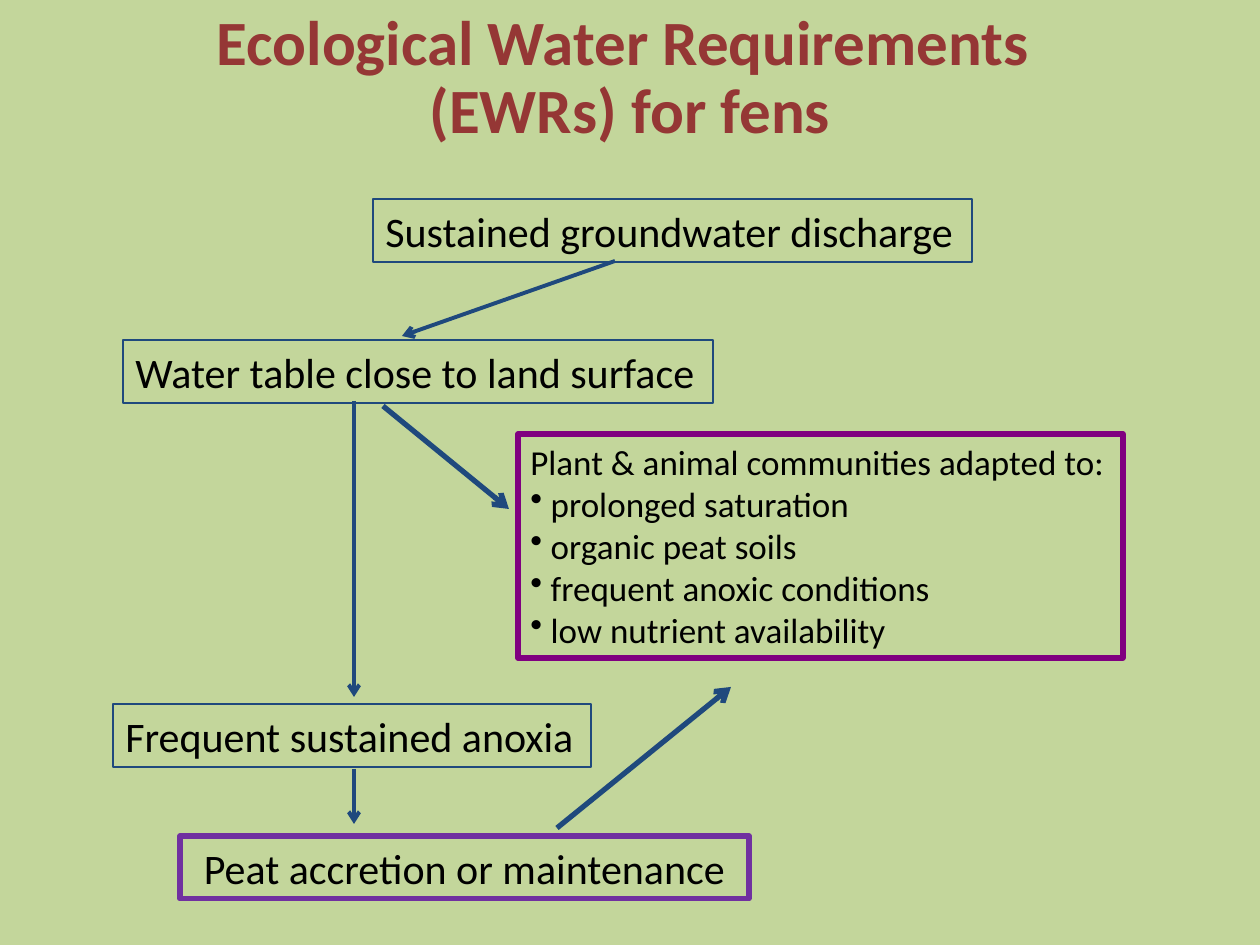
"""Builds a flow chart slide on the ecological water requirements of fens."""
from lxml import etree
from pptx import Presentation
from pptx.dml.color import RGBColor
from pptx.enum.shapes import MSO_CONNECTOR, MSO_SHAPE
from pptx.enum.text import MSO_ANCHOR, MSO_AUTO_SIZE, PP_ALIGN
from pptx.oxml.ns import qn
from pptx.util import Emu, Pt

RECTANGLE = MSO_SHAPE.RECTANGLE
STRAIGHT = MSO_CONNECTOR.STRAIGHT
LEFT, CENTER = PP_ALIGN.LEFT, PP_ALIGN.CENTER
TOP, MIDDLE = MSO_ANCHOR.TOP, MSO_ANCHOR.MIDDLE
FIT_SHAPE = MSO_AUTO_SIZE.SHAPE_TO_FIT_TEXT

EMU_PER_PX = 914400 // 126
FONT = "Calibri"
COLORS = {
    "background": "C3D69B",
    "title": "953735",
    "text": "000000",
    "flow": "1F497D",
    "peat": "7030A0",
    "communities": "800080",
}
ADAPTATIONS = [
    "prolonged saturation",
    "organic peat soils",
    "frequent anoxic conditions",
    "low nutrient availability",
]
FLOW_BOXES = [
    ("Water table close to land surface", (123, 340, 590, 63)),
    ("Frequent sustained anoxia", (113, 704, 478, 63)),
    ("Sustained groundwater discharge", (373, 199, 599, 63)),
]
ARROWS = [
    ((615, 261), (402, 336), 2.25),
    ((383, 406), (509, 509), 3),
    ((354, 769), (354, 824), 2.25),
    ((354, 401), (354, 697), 2.25),
    ((557, 828), (731, 687), 3),
]


def px(*lengths):
    """Turn pixel lengths into EMU."""
    return [Emu(length * EMU_PER_PX) for length in lengths]


def color(name):
    """Look up a named colour."""
    return RGBColor.from_string(COLORS[name])


def write(para, text, size=24, ink="text", bold=False, align=LEFT, bullet=False, spacing=None):
    """Fill a paragraph with one formatted span."""
    para.alignment = align
    if spacing:
        para.line_spacing = spacing
    if bullet:
        etree.SubElement(para._p.get_or_add_pPr(), qn("a:buChar")).set("char", "•")
        text = " " + text
    span = para.add_run()
    span.text = text
    span.font.name = FONT
    span.font.size = Pt(size)
    span.font.bold = bold
    span.font.color.rgb = color(ink)


def add_paragraph(frame, text, **style):
    """Append a formatted paragraph to a text frame."""
    write(frame.add_paragraph(), text, **style)


def add_box(page, text, place, outline="flow", weight=0.75, wrap=False, **style):
    """Add an outlined text box and return its text frame."""
    box = page.shapes.add_shape(RECTANGLE, *px(*place))
    box.shadow.inherit = False
    box.fill.background()
    box.line.color.rgb = color(outline)
    box.line.width = Pt(weight)
    frame = box.text_frame
    frame.word_wrap = wrap
    frame.auto_size = FIT_SHAPE
    frame.vertical_anchor = TOP
    write(frame.paragraphs[0], text, **style)
    return frame


def add_arrow(page, start, end, weight):
    """Add a straight arrow with an open head at its end."""
    arrow = page.shapes.add_connector(STRAIGHT, *px(*start, *end))
    arrow.line.color.rgb = color("flow")
    arrow.line.width = Pt(weight)
    etree.SubElement(arrow.line._get_or_add_ln(), qn("a:tailEnd")).set("type", "arrow")
    etree.SubElement(arrow._element.spPr, qn("a:effectLst"))


def add_title(page, lines, place):
    """Add the centred slide title."""
    frame = page.shapes.add_textbox(*px(*place)).text_frame
    frame.word_wrap = True
    frame.vertical_anchor = MIDDLE
    style = {"size": 36, "ink": "title", "bold": True, "align": CENTER, "spacing": 0.9}
    write(frame.paragraphs[0], lines[0], **style)
    for line in lines[1:]:
        add_paragraph(frame, line, **style)


def main():
    """Build and save the slide."""
    deck = Presentation()
    deck.slide_width, deck.slide_height = px(1260, 945)
    page = deck.slides.add_slide(deck.slide_layouts[6])
    page.background.fill.solid()
    page.background.fill.fore_color.rgb = color("background")

    for text, place in FLOW_BOXES:
        add_box(page, text, place)
    add_box(page, "Peat accretion or maintenance", (180, 836, 569, 63),
            outline="peat", weight=3, wrap=True, align=CENTER)
    communities = add_box(page, "Plant & animal communities adapted to:", (518, 434, 605, 224),
                          outline="communities", weight=3, size=20)
    for adaptation in ADAPTATIONS:
        add_paragraph(communities, adaptation, size=20, bullet=True)
    for start, end, weight in ARROWS:
        add_arrow(page, start, end, weight)
    add_title(page, ["Ecological Water Requirements ", "(EWRs) for fens"], (63, 0, 1134, 158))
    deck.save("out.pptx")


if __name__ == "__main__":
    main()
